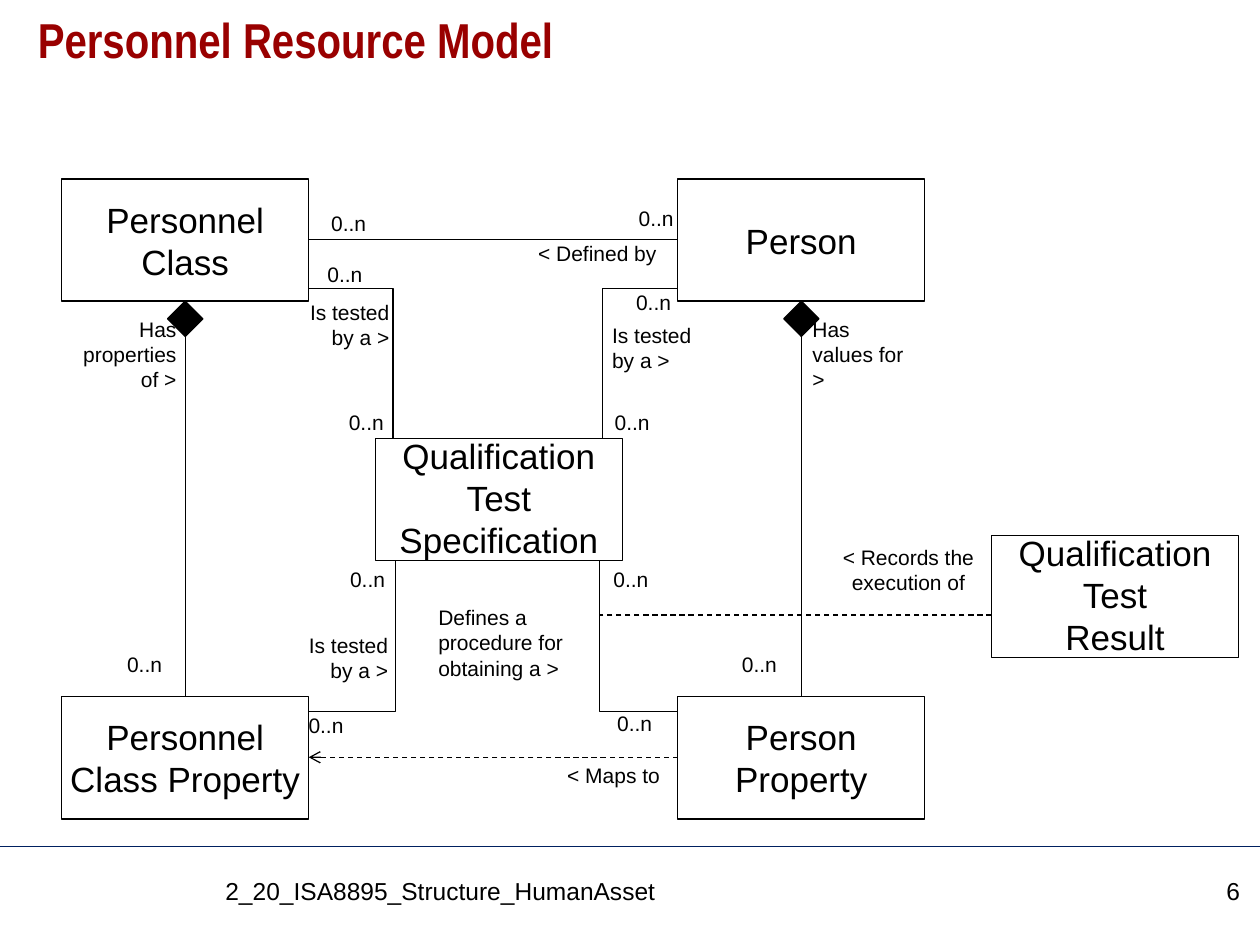
from lxml import etree
from pptx import Presentation
from pptx.dml.color import RGBColor
from pptx.enum.dml import MSO_LINE
from pptx.enum.shapes import MSO_CONNECTOR, MSO_SHAPE
from pptx.enum.text import MSO_ANCHOR, MSO_AUTO_SIZE, PP_ALIGN
from pptx.oxml.ns import qn
from pptx.util import Inches, Pt

LEFT, CENTER, RIGHT = PP_ALIGN.LEFT, PP_ALIGN.CENTER, PP_ALIGN.RIGHT
TOP, MIDDLE = MSO_ANCHOR.TOP, MSO_ANCHOR.MIDDLE
NO_FIT, GROW = MSO_AUTO_SIZE.NONE, MSO_AUTO_SIZE.SHAPE_TO_FIT_TEXT
DASH = MSO_LINE.DASH
BLACK, WHITE, NAVY, DARK_RED = "000000", "FFFFFF", "002060", "990000"

TITLE = "Personnel Resource Model"
FOOTER = "2_20_ISA8895_Structure_HumanAsset"
PAGE = "6"

# Entity grid
BOX_W, BOX_H = 1.96, 0.97
CLASS_X, PERSON_X = 0.49, 5.38
UPPER_Y, LOWER_Y = 1.42, 5.53
TEST_X, TEST_Y = 2.98, 3.48
RESULT_X, RESULT_Y = 7.87, 4.25
CLASS_RIGHT = CLASS_X + BOX_W
UPPER_BOTTOM, TEST_BOTTOM = UPPER_Y + BOX_H, TEST_Y + BOX_H
DIAMOND = 0.28

# text, left, top, top inset
ENTITIES = [
    ("Qualification\nTest\nSpecification", TEST_X, TEST_Y, 0.02),
    ("Qualification\nTest\nResult", RESULT_X, RESULT_Y, 0.02),
    ("Person\nProperty", PERSON_X, LOWER_Y, 0.05),
    ("Person", PERSON_X, UPPER_Y, 0.05),
    ("Personnel\nClass Property", CLASS_X, LOWER_Y, 0.05),
    ("Personnel\nClass", CLASS_X, UPPER_Y, 0.05),
]

# text, left, top, width, alignment
RELATIONS = [
    ("Is tested\nby a >", 4.76, 2.51, 0.83, LEFT),
    ("Is tested\nby a >", 2.36, 2.33, 0.83, RIGHT),
    ("Is tested\nby a >", 2.35, 4.97, 0.83, RIGHT),
    ("Has\nvalues for >", 6.35, 2.46, 1.06, LEFT),
    ("Has\nproperties\nof >", 0.56, 2.46, 0.94, RIGHT),
    ("< Maps to", 4.4, 6, 0.94, CENTER),
    ("< Defined by", 4.13, 1.86, 1.18, RIGHT),
    ("< Records the\nexecution of", 6.59, 4.27, 1.24, CENTER),
    ("Defines a\nprocedure for\nobtaining a >", 3.38, 4.75, 1.19, LEFT),
]

MULTIPLICITY = "0..n"
MULTIPLICITY_AT = [
    (2.53, 1.62), (4.97, 1.58), (2.5, 2.03), (4.95, 2.25),
    (2.67, 3.2), (4.78, 3.2), (2.68, 4.45), (4.77, 4.45),
    (0.91, 5.12), (5.79, 5.12), (2.35, 5.61), (4.8, 5.59),
]

# x at the test specification, its edge, x and y at the entity
ELBOWS = [
    (3.12, TEST_Y, CLASS_RIGHT, 2.29),
    (4.78, TEST_Y, PERSON_X, 2.29),
    (3.14, TEST_BOTTOM, CLASS_RIGHT, 5.65),
    (4.76, TEST_BOTTOM, PERSON_X, 5.65),
]


def rgb(value):
    return RGBColor.from_string(value)


def write(shape, text, size, align=LEFT, anchor=TOP, wrap=True, fit=NO_FIT,
          color=BLACK, font="Arial", bold=False, inset_top=0.05):
    frame = shape.text_frame
    frame.text = text
    settings = {
        "word_wrap": wrap, "auto_size": fit, "vertical_anchor": anchor,
        "margin_left": Inches(0.1), "margin_right": Inches(0.1),
        "margin_top": Inches(inset_top), "margin_bottom": Inches(0.05),
    }
    for name, value in settings.items():
        setattr(frame, name, value)
    for paragraph in frame.paragraphs:
        paragraph.alignment = align
        for name, value in {"size": Pt(size), "name": font, "bold": bold}.items():
            setattr(paragraph.font, name, value)
        paragraph.font.color.rgb = rgb(color)


def add_text(slide, text, x, y, w, h, size, **options):
    box = slide.shapes.add_textbox(Inches(x), Inches(y), Inches(w), Inches(h))
    write(box, text, size, **options)


def add_line(slide, start, end, color=BLACK, dash=None, arrow=False):
    line = slide.shapes.add_connector(
        MSO_CONNECTOR.STRAIGHT, *(Inches(v) for v in (*start, *end)))
    line.line.color.rgb = rgb(color)
    line.line.width = Pt(0.75)
    if dash:
        line.line.dash_style = dash
    if arrow:
        etree.SubElement(line.line._get_or_add_ln(), qn("a:tailEnd"), type="arrow")
    etree.SubElement(line._element.spPr, qn("a:effectLst"))


def outline(shape, fill=None):
    shape.shadow.inherit = False
    if fill:
        shape.fill.solid()
        shape.fill.fore_color.rgb = rgb(fill)
    else:
        shape.fill.background()
    shape.line.color.rgb = rgb(BLACK)
    shape.line.width = Pt(0.75)


def add_filled(slide, kind, x, y, w, h, fill):
    shape = slide.shapes.add_shape(kind, Inches(x), Inches(y), Inches(w), Inches(h))
    outline(shape, fill)
    return shape


def add_elbow(slide, test_x, test_y, entity_x, entity_y):
    builder = slide.shapes.build_freeform(Inches(test_x), Inches(test_y))
    corner = (Inches(test_x), Inches(entity_y))
    builder.add_line_segments([corner, (Inches(entity_x), Inches(entity_y))], close=False)
    outline(builder.convert_to_shape())


def add_composition(slide, x):
    """Line from an upper entity to its property, with a filled diamond."""
    center = x + BOX_W / 2
    add_line(slide, (center, UPPER_BOTTOM), (center, LOWER_Y))
    add_filled(slide, MSO_SHAPE.DIAMOND, center - DIAMOND / 2, UPPER_BOTTOM,
               DIAMOND, DIAMOND, BLACK)


def main():
    deck = Presentation()
    deck.slide_width, deck.slide_height = Inches(10), Inches(7.5)
    slide = deck.slides.add_slide(deck.slide_layouts[5])

    title = slide.shapes.title
    title.left, title.top = Inches(0.2), Inches(0.08)
    title.width, title.height = Inches(9.61), Inches(0.83)
    write(title, TITLE, 28, color=DARK_RED, font="Arial Narrow", bold=True)
    title.text_frame.paragraphs[0].line_spacing = 0.9

    add_line(slide, (0, 6.72), (10, 6.72), NAVY)
    add_text(slide, FOOTER, 1.69, 6.9, 7.21, 0.45, 14)
    add_text(slide, PAGE, 9.02, 6.9, 0.92, 0.45, 14, align=RIGHT)

    add_line(slide, (PERSON_X, 1.9), (CLASS_RIGHT, 1.9))
    add_line(slide, (PERSON_X, 6.01), (CLASS_RIGHT, 6.01), dash=DASH, arrow=True)
    add_line(slide, (RESULT_X, 4.88), (4.76, 4.88), dash=DASH)
    for x in (CLASS_X, PERSON_X):
        add_composition(slide, x)
    for elbow in ELBOWS:
        add_elbow(slide, *elbow)

    for text, x, y, inset_top in ENTITIES:
        box = add_filled(slide, MSO_SHAPE.RECTANGLE, x, y, BOX_W, BOX_H, WHITE)
        write(box, text, 20, CENTER, MIDDLE, wrap=False, inset_top=inset_top)

    for text, x, y, w, align in RELATIONS:
        height = 0.1 + 0.2 * len(text.splitlines())
        add_text(slide, text, x, y, w, height, 12, align=align, wrap=False, fit=GROW)
    for x, y in MULTIPLICITY_AT:
        add_text(slide, MULTIPLICITY, x, y, 0.48, 0.3, 12, wrap=False, fit=GROW)

    deck.save("out.pptx")


if __name__ == "__main__":
    main()
